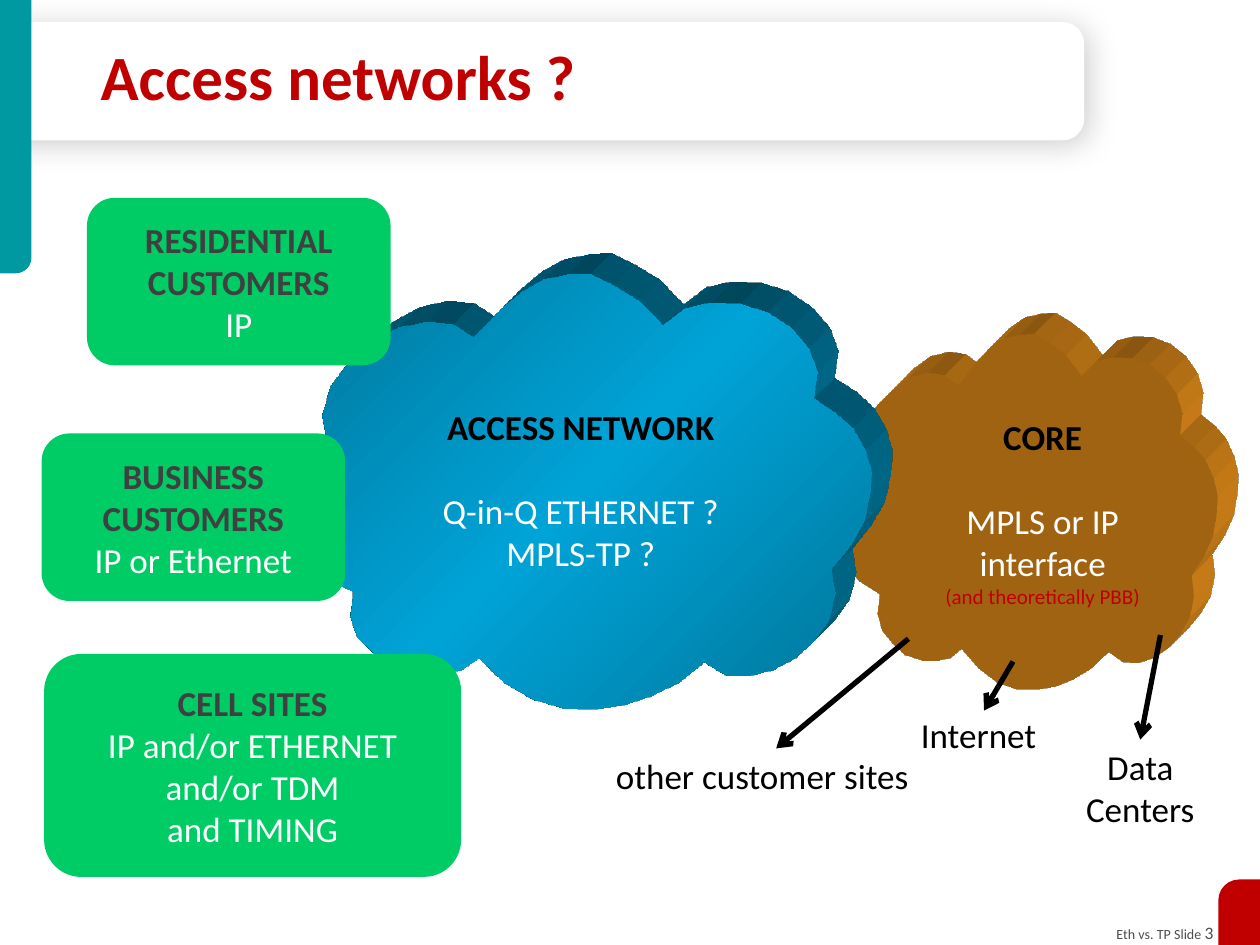
from copy import deepcopy
from lxml.etree import SubElement
from pptx import Presentation
from pptx.dml.color import RGBColor
from pptx.enum.shapes import MSO_CONNECTOR as Connector, MSO_SHAPE as Shape
from pptx.enum.text import MSO_ANCHOR as Anchor, PP_ALIGN as Align
from pptx.oxml import parse_xml
from pptx.oxml.ns import qn
from pptx.util import Inches, Pt

COLORS = {
    "white": "FFFFFF", "black": "000000", "grey": "404040", "footer": "4D4D4D",
    "teal": "0098A1", "red": "C00000", "green": "00CC66", "orange": "E28C1A",
    "deep": "007599", "bright": "00A3D6",
}
DRAWING = 'xmlns:a="http://schemas.openxmlformats.org/drawingml/2006/main"'
SHADOW = (f'<a:effectLst {DRAWING}><a:outerShdw blurRad="215900" dist="38100" dir="2700000" '
          'algn="tl" rotWithShape="0"><a:srgbClr val="000000"><a:alpha val="19000"/></a:srgbClr>'
          '</a:outerShdw></a:effectLst>')
SCENE = (f'<a:scene3d {DRAWING}><a:camera prst="legacyObliqueTopRight"/>'
         '<a:lightRig rig="legacyFlat3" dir="b"/></a:scene3d>')
DEPTH = (f'<a:sp3d {DRAWING} extrusionH="430200" prstMaterial="legacyMatte"><a:extrusionClr>'
         '<a:srgbClr val="{}"/></a:extrusionClr></a:sp3d>')

CLOUD = [
    (32.3, 14.5), (28.9, 11.6), (24.4, 11), (19.5, 12.4), (15, 15.9), (10.9, 20.5), (7.9, 26),
    (6.6, 32.4), (7.3, 38.7), (4.3, 41.6), (1.7, 45.4), (0.2, 49.7), (0, 54.6), (0.6, 59.8),
    (2.8, 64.7), (6.4, 69.4), (11.8, 73.1), (11.3, 78.6), (12.4, 83.2), (15.2, 87),
    (18.4, 90.2), (22.7, 91.6), (26.8, 91.9), (30.4, 91), (33.2, 88.4), (37.5, 93.9),
    (42.2, 97.7), (47.3, 99.7), (52.5, 100), (57.6, 99.1), (62.3, 97.1), (67.2, 93.9),
    (71.5, 89.3), (75.2, 92.2), (79, 92.5), (83.3, 91), (87.2, 88.2), (90.1, 84.4),
    (92.7, 79.5), (93.8, 73.4), (93.1, 67.9), (96.4, 62.4), (98.7, 56.9), (99.6, 51.2),
    (100, 45.7), (98.9, 40.5), (96.8, 35.5), (93.8, 31.8), (90.1, 28.6), (90.8, 22.5),
    (89.3, 17.1), (86.3, 12.4), (82.2, 8.7), (77.7, 6.9), (72.8, 6.6), (68.3, 7.8),
    (64.5, 11.8), (60.4, 6.1), (56.1, 2.6), (52.2, 0), (48.2, 0.3), (44.1, 1.4),
    (40.3, 4.3), (36.4, 8.7),
]


def rgb(name):
    return RGBColor.from_string(COLORS[name])


def grid(*lengths):
    return [Inches(length / 10) for length in lengths]


def write(paragraph, text, size=20, color="black", bold=False, align=Align.LEFT,
          before=0, spacing=None):
    paragraph.alignment = align
    if before:
        paragraph.space_before = Pt(before)
    if spacing:
        paragraph.line_spacing = spacing
    run = paragraph.add_run()
    run.text = text
    run.font.name, run.font.size, run.font.bold = "Calibri", Pt(size), bold
    run.font.color.rgb = rgb(color)


class NetworkSlide:
    """Draws styled elements on a grid of 100 columns by 75 rows."""

    def __init__(self, presentation):
        self.shapes = presentation.slides.add_slide(presentation.slide_layouts[6]).shapes

    def fill_lines(self, frame, lines, **style):
        frame.word_wrap = True
        for index, (text, changes) in enumerate(lines):
            paragraph = frame.add_paragraph() if index else frame.paragraphs[0]
            write(paragraph, text, **{**style, **changes})

    def text(self, box, *lines, anchor=Anchor.TOP, **style):
        frame = self.shapes.add_textbox(*grid(*box)).text_frame
        frame.vertical_anchor = anchor
        self.fill_lines(frame, lines, **style)
        return frame

    def finish(self, shape, color):
        shape.shadow.inherit = False
        shape.fill.solid()
        shape.fill.fore_color.rgb = rgb(color)
        shape.line.fill.background()
        return shape

    def panel(self, kind, box, color, adjustments=(), flip=None):
        shape = self.finish(self.shapes.add_shape(kind, *grid(*box)), color)
        for index, value in enumerate(adjustments):
            shape.adjustments[index] = value
        if flip:
            shape.element.spPr.xfrm.set(flip, "1")
        return shape

    def title_bar(self, box):
        shape = self.panel(Shape.ROUND_2_SAME_RECTANGLE, box, "white", (0.184, 0))
        shape.rotation = 90
        properties = shape.element.spPr
        properties.replace(properties.find(qn("a:effectLst")), parse_xml(SHADOW))

    def customers(self, box, *lines):
        shape = self.panel(Shape.ROUNDED_RECTANGLE, box, "green")
        shape.text_frame.vertical_anchor = Anchor.MIDDLE
        self.fill_lines(shape.text_frame, lines, color="white", align=Align.CENTER)

    def cloud(self, box, color, middle=None):
        left, top, width, height = grid(*box)
        points = [(round(left + x * width / 100), round(top + y * height / 100))
                  for x, y in CLOUD]
        builder = self.shapes.build_freeform(*points[0])
        builder.add_line_segments(points[1:])
        shape = self.finish(builder.convert_to_shape(), color)
        if middle:
            self.blend(shape.fill, (color, middle, color))
        properties = shape.element.spPr
        properties.append(parse_xml(SCENE))
        properties.append(parse_xml(DEPTH.format(COLORS[color])))

    def blend(self, fill, colors):
        fill.gradient()
        fill.gradient_angle = 315
        stop_list = fill.gradient_stops[0]._gs.getparent()
        stop_list.append(deepcopy(stop_list[-1]))
        for index, (stop, color) in enumerate(zip(fill.gradient_stops, colors)):
            stop.position = index / (len(colors) - 1)
            stop.color.rgb = rgb(color)

    def arrow(self, *ends):
        connector = self.shapes.add_connector(Connector.STRAIGHT, *grid(*ends))
        connector.line.color.rgb = rgb("black")
        connector.line.width = Pt(3)
        SubElement(connector.line._get_or_add_ln(), qn("a:tailEnd"), type="arrow")
        SubElement(connector.element.spPr, qn("a:effectLst"))


def main():
    presentation = Presentation()
    presentation.slide_width, presentation.slide_height = grid(100, 75)
    slide = NetworkSlide(presentation)
    heading = {"color": "grey", "bold": True}

    footer = slide.text((82.6, 72.7, 14.7, 2.7), ("Eth vs. TP Slide ", {}),
                        size=8, color="footer", align=Align.RIGHT)
    write(footer.paragraphs[0], "3", size=10, color="footer", align=Align.RIGHT)
    slide.title_bar((38.3, -36.6, 9.4, 86.1))
    slide.panel(Shape.ROUND_1_RECTANGLE, (0, 0, 2.5, 21.7), "teal", (0.5,), "flipV")
    slide.panel(Shape.ROUND_1_RECTANGLE, (96.7, 69.8, 3.3, 5.2), "red", (0.5,), "flipH")
    slide.cloud((66.2, 26.5, 30.4, 28.2), "orange")
    slide.text((7, 2.9, 74, 7.1), ("Access networks ?", {}), anchor=Anchor.MIDDLE,
               size=36, color="red", bold=True, spacing=0.85)
    slide.cloud((22.5, 21.7, 46.7, 34.6), "deep", "bright")

    slide.text((70, 32.5, 25.5, 16.5), ("CORE", {"color": "black", "bold": True}),
               ("MPLS or IP", {"before": 24}), ("interface", {}),
               ("(and theoretically PBB)", {"size": 12, "color": "red"}),
               color="white", align=Align.CENTER)
    slide.text((27.3, 31.7, 37.6, 14.5), ("ACCESS NETWORK", {"color": "black", "bold": True}),
               ("Q-in-Q ETHERNET ?", {"before": 24}), ("MPLS-TP ?", {}),
               color="white", align=Align.CENTER)
    slide.text((72.1, 56.1, 14.8, 4.4), ("Internet", {}))
    slide.text((47.9, 59.4, 27.3, 4.4), ("other customer sites", {}))
    slide.text((83.1, 58.7, 14.8, 7.7), ("Data Centers", {}), align=Align.CENTER)
    for ends in ((92.1, 50.4, 90.5, 58.7), (72.1, 50.7, 61.6, 59.4), (80.4, 52.5, 78.1, 56.4)):
        slide.arrow(*ends)

    slide.customers((6.9, 15.7, 24.1, 13.3), ("RESIDENTIAL CUSTOMERS", heading), ("IP", {}))
    slide.customers((3.3, 34.4, 24.1, 13.3), ("BUSINESS CUSTOMERS", heading),
                    ("IP or Ethernet", {}))
    slide.customers((3.5, 51.9, 33.1, 17.7), ("CELL SITES", heading),
                    ("IP and/or ETHERNET", {}), ("and/or TDM", {}), ("and TIMING", {}))
    presentation.save("out.pptx")


if __name__ == "__main__":
    main()
